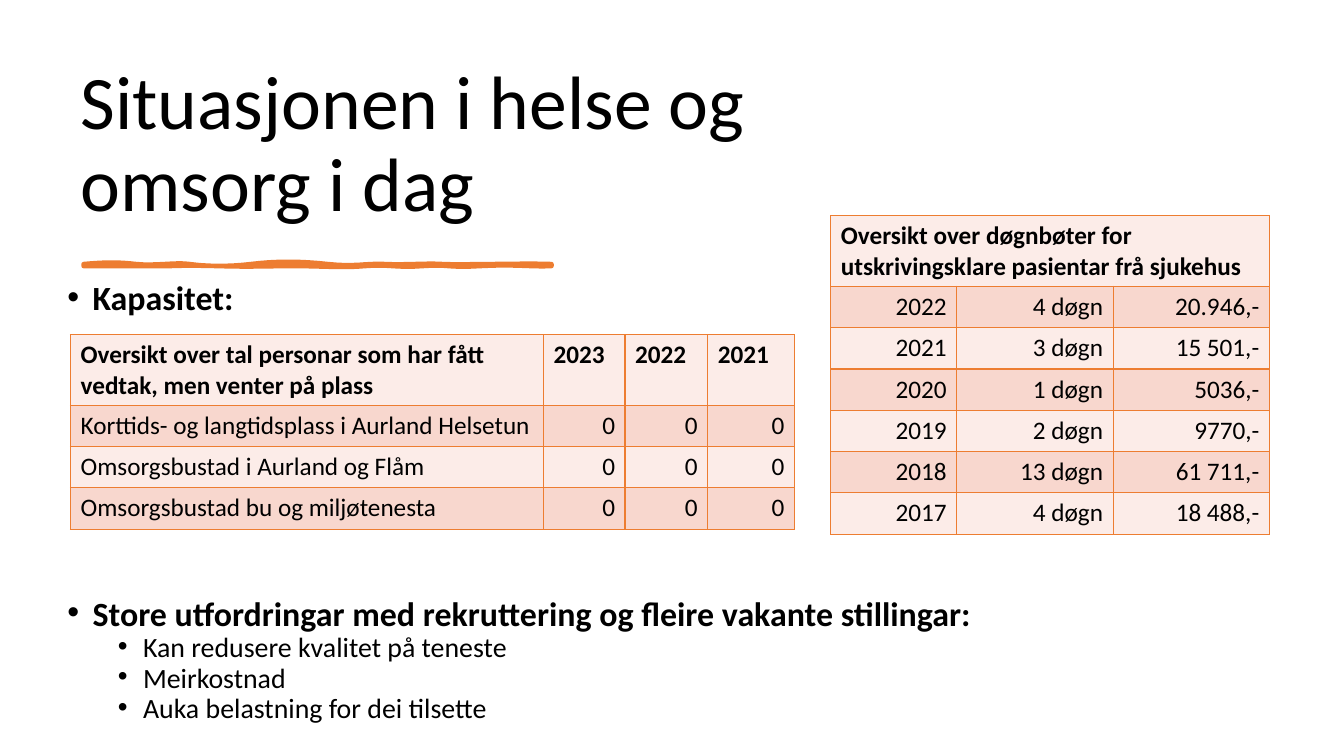
from lxml import etree
from pptx import Presentation
from pptx import util as u
from pptx.dml import color
from pptx.enum import text
from pptx.oxml import ns

COLORS = {"text": "000000", "accent": "ED7D31", "light": "FCECE8", "band": "F8D7CE"}
FONT = "Calibri"
LEFT, RIGHT = text.PP_ALIGN.LEFT, text.PP_ALIGN.RIGHT

CAPACITY = [
    ["Oversikt over tal personar som har fått vedtak, men venter på plass",
     "2023", "2022", "2021"],
    ["Korttids- og langtidsplass i Aurland Helsetun", "0", "0", "0"],
    ["Omsorgsbustad i Aurland og Flåm", "0", "0", "0"],
    ["Omsorgsbustad bu og miljøtenesta", "0", "0", "0"],
]
FINES = [
    ["Oversikt over døgnbøter for\nutskrivingsklare pasientar frå sjukehus", "", ""],
    ["2022", "4 døgn", "20.946,-"],
    ["2021", "3 døgn", "15 501,-"],
    ["2020", "1 døgn", "5036,-"],
    ["2019", "2 døgn", "9770,-"],
    ["2018", "13 døgn", "61 711,-"],
    ["2017", "4 døgn", "18 488,-"],
]
CHALLENGES = ["Kan redusere kvalitet på teneste", "Meirkostnad",
              "Auka belastning for dei tilsette"]

# Each segment: two control points and an end point, relative to the rule's left and top.
RULE_START = (0, 0)
RULE_CURVES = [
    ((0.23, -0.02), (0.34, -0.02), (0.52, 0)),
    ((0.71, 0.02), (0.91, -0.02), (1.05, 0)),
    ((1.19, 0.02), (1.42, 0.03), (1.66, 0)),
    ((1.9, -0.03), (2.15, -0.03), (2.42, 0)),
    ((2.69, 0.03), (2.8, -0.01), (2.99, 0)),
    ((3.18, 0.01), (3.39, -0.01), (3.56, 0)),
    ((3.73, 0.01), (4.35, -0.01), (4.64, 0)),
    ((4.64, 0.01), (4.64, 0.01), (4.64, 0.02)),
    ((4.44, 0.03), (4.28, 0), (3.93, 0.02)),
    ((3.59, 0.04), (3.63, 0), (3.36, 0.02)),
    ((3.09, 0.04), (3.03, 0), (2.79, 0.02)),
    ((2.56, 0.04), (2.39, 0.02), (2.08, 0.02)),
    ((1.78, 0.02), (1.7, 0.03), (1.33, 0.02)),
    ((0.95, 0.01), (0.96, 0.02), (0.8, 0.02)),
    ((0.65, 0.02), (0.2, 0.02), (0, 0.02)),
]
CURVE_STEPS = 8


def rgb(name):
    return color.RGBColor.from_string(COLORS[name])


def add_bullet(para, left):
    """Give the paragraph a hanging bullet, with its text at left inches."""
    props = para._p.get_or_add_pPr()
    props.set("marL", str(u.Inches(left)))
    props.set("indent", str(u.Inches(-0.25)))
    etree.SubElement(props, ns.qn("a:buFont"), typeface="Arial")
    etree.SubElement(props, ns.qn("a:buChar"), char="•")


def write(para, words, size=18, bold=False, align=LEFT, spacing=1.0, before=0, bullet=None):
    if bullet is not None:
        add_bullet(para, bullet)
    para.alignment = align
    para.line_spacing = spacing
    para.space_before = u.Pt(before)
    span = para.add_run()
    span.text = words
    span.font.name = FONT
    span.font.size = u.Pt(size)
    span.font.bold = bold
    span.font.color.rgb = rgb("text")


def place_title(slide, left, top, width, height):
    title = slide.shapes.title
    title.left, title.top = u.Inches(left), u.Inches(top)
    title.width, title.height = u.Inches(width), u.Inches(height)
    frame = title.text_frame
    frame.word_wrap = True
    frame.auto_size = text.MSO_AUTO_SIZE.NONE
    frame.vertical_anchor = text.MSO_ANCHOR.BOTTOM
    write(frame.paragraphs[0], "Situasjonen i helse og omsorg i dag", size=54, spacing=0.9)


def curve_points(start, curves):
    """Return points along a chain of cubic curves."""
    points = []
    for first, second, end in curves:
        for step in range(1, CURVE_STEPS + 1):
            t = step / CURVE_STEPS
            weights = ((1 - t) ** 3, 3 * t * (1 - t) ** 2, 3 * t * t * (1 - t), t ** 3)
            knots = (start, first, second, end)
            points.append(tuple(sum(w * knot[axis] for w, knot in zip(weights, knots))
                                for axis in (0, 1)))
        start = end
    return points


def draw_rule(slide, left, top):
    """Draw the hand-drawn line under the title."""
    builder = slide.shapes.build_freeform(u.Inches(left), u.Inches(top))
    builder.add_line_segments([(u.Inches(left + x), u.Inches(top + y))
                               for x, y in curve_points(RULE_START, RULE_CURVES)])
    rule = builder.convert_to_shape()
    rule.shadow.inherit = False
    rule.fill.solid()
    rule.fill.fore_color.rgb = rgb("accent")
    rule.line.color.rgb = rgb("accent")
    rule.line.width = u.Pt(3.25)


def place_body(slide, left, top, width, height):
    box = slide.shapes.add_textbox(*map(u.Inches, (left, top, width, height)))
    frame = box.text_frame
    frame.word_wrap = True
    heading = {"size": 24.2, "bold": True, "spacing": 0.7, "bullet": 0.25}
    write(frame.paragraphs[0], "Kapasitet:", **heading)
    write(frame.add_paragraph(),
          "Store utfordringar med rekruttering og fleire vakante stillingar:",
          before=205, **heading)
    for challenge in CHALLENGES:
        write(frame.add_paragraph(), challenge, size=19.9, spacing=0.7, before=5, bullet=0.75)


def format_cell(cell, fill):
    props = cell._tc.get_or_add_tcPr()
    for side in ("lnL", "lnR", "lnT", "lnB"):
        line = etree.SubElement(props, ns.qn(f"a:{side}"), w=str(u.Pt(1)))
        solid = etree.SubElement(line, ns.qn("a:solidFill"))
        etree.SubElement(solid, ns.qn("a:srgbClr"), val=COLORS["accent"])
    cell.fill.solid()
    cell.fill.fore_color.rgb = rgb(fill)


def place_table(slide, left, top, widths, rows, right_from, merge_header=False):
    """Add a banded table; body columns from right_from on are right-aligned."""
    heights = [0.7] + [0.41] * (len(rows) - 1)
    size = (left, top, sum(widths), sum(heights))
    table = slide.shapes.add_table(len(rows), len(widths), *map(u.Inches, size)).table
    table.first_row = table.horz_banding = False
    for column, width in zip(table.columns, widths):
        column.width = u.Inches(width)
    for row, height in zip(table.rows, heights):
        row.height = u.Inches(height)
    if merge_header:
        table.cell(0, 0).merge(table.cell(0, len(widths) - 1))
    for r, values in enumerate(rows):
        for c, value in enumerate(values):
            cell = table.cell(r, c)
            format_cell(cell, "band" if r % 2 else "light")
            if cell.is_spanned:
                continue
            frame = cell.text_frame
            for i, words in enumerate(value.split("\n")):
                para = frame.add_paragraph() if i else frame.paragraphs[0]
                write(para, words, bold=r == 0,
                      align=RIGHT if r and c >= right_from else LEFT)


def build_slide(deck):
    slide = deck.slides.add_slide(deck.slide_layouts[5])
    place_title(slide, 0.7, 0.36, 7.54, 1.95)
    draw_rule(slide, 0.83, 2.62)
    place_body(slide, 0.57, 2.81, 9.65, 4.48)
    place_table(slide, 0.7, 3.32, [4.69, 0.81, 0.82, 0.86], CAPACITY, right_from=1)
    place_table(slide, 8.24, 2.14, [1.25, 1.55, 1.55], FINES, right_from=0, merge_header=True)


def main():
    deck = Presentation()
    deck.slide_width, deck.slide_height = u.Inches(13.33), u.Inches(7.5)
    build_slide(deck)
    deck.save("out.pptx")


if __name__ == "__main__":
    main()
